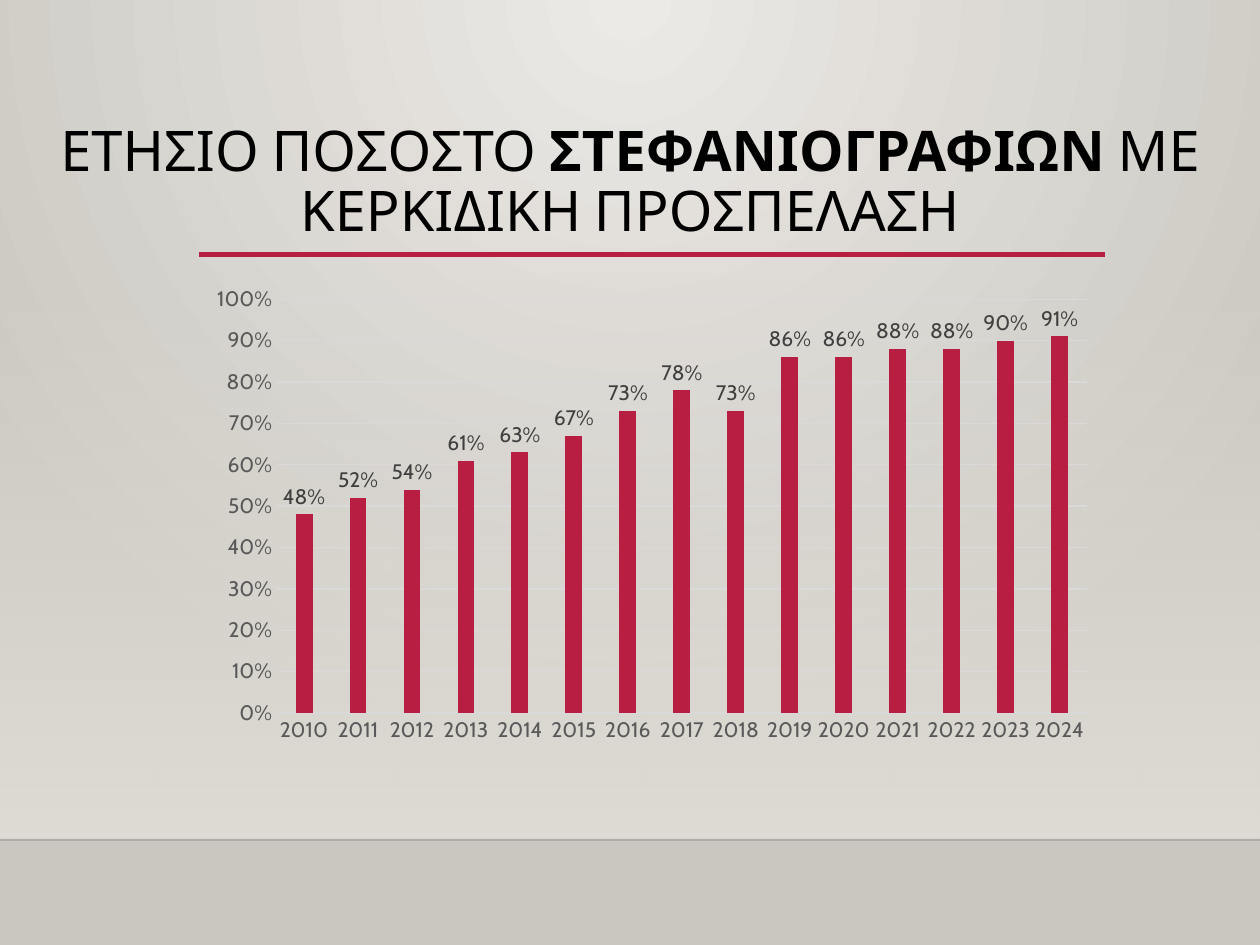
"""Build a slide charting the yearly share of coronary angiographies with radial access."""
from lxml.etree import SubElement
from pptx import Presentation
from pptx.chart.data import CategoryChartData
from pptx.dml.color import RGBColor
from pptx.enum.chart import XL_CHART_TYPE, XL_LABEL_POSITION, XL_TICK_MARK
from pptx.enum.shapes import MSO_CONNECTOR, MSO_SHAPE
from pptx.enum.text import MSO_ANCHOR, MSO_AUTO_SIZE, PP_ALIGN
from pptx.oxml.ns import qn
from pptx.util import Cm, Pt

FONT = "Cabin"
BLACK = RGBColor(0x00, 0x00, 0x00)
CRIMSON = RGBColor(0xB7, 0x1E, 0x42)
LIGHT = RGBColor(0xEC, 0xEA, 0xE7)
STONE = RGBColor(0xCA, 0xC7, 0xC1)
SAND = RGBColor(0xDF, 0xDB, 0xD5)
GRID = RGBColor(0xD9, 0xD9, 0xD9)
AXIS_TEXT = RGBColor(0x59, 0x59, 0x59)
LABEL_TEXT = RGBColor(0x40, 0x40, 0x40)

WIDTH = Cm(25.4)
CHART_LEFT, CHART_WIDTH = Cm(4.01), Cm(18.26)
WALL_TOP, FLOOR_TOP = Cm(5.59), Cm(16.93)
SHARES = [0.48, 0.52, 0.54, 0.61, 0.63, 0.67, 0.73, 0.78, 0.73,
          0.86, 0.86, 0.88, 0.88, 0.9, 0.91]


def set_font(font, size, color):
    font.name = FONT
    font.size = Pt(size)
    font.color.rgb = color


def set_alpha(color_element, percent):
    SubElement(color_element, qn("a:alpha")).set("val", str(percent * 1000))


deck = Presentation()
deck.slide_width = WIDTH
deck.slide_height = Cm(19.05)
page = deck.slides.add_slide(deck.slide_layouts[5])

backdrop = page.background.fill
backdrop.gradient()
for stop, color in zip(backdrop.gradient_stops, (LIGHT, STONE)):
    stop.color.rgb = color
gradient = page.element.find(".//" + qn("a:gradFill"))
gradient.remove(gradient.find(qn("a:lin")))
circle = SubElement(gradient, qn("a:path"))
circle.set("path", "circle")
focus = SubElement(circle, qn("a:fillToRect"))
for side, percent in (("l", 43), ("r", 43), ("b", 100)):
    focus.set(side, str(percent * 1000))

wall = page.shapes.add_shape(MSO_SHAPE.RECTANGLE, 0, WALL_TOP, WIDTH, FLOOR_TOP - WALL_TOP)
wall.shadow.inherit = False
wall.line.fill.background()
wall.fill.gradient()
wall.fill.gradient_angle = 270
for stop in wall.fill.gradient_stops:
    stop.color.rgb = SAND
set_alpha(wall.element.find(".//" + qn("a:srgbClr")), 0)

RULES = [
    (0, WIDTH, FLOOR_TOP, BLACK, 1, 20),
    (CHART_LEFT, CHART_LEFT + CHART_WIDTH, Cm(5.13), CRIMSON, 2.5, 100),
]
for left, right, top, color, weight, opacity in RULES:
    rule = page.shapes.add_connector(MSO_CONNECTOR.STRAIGHT, left, top, right, top)
    rule.line.color.rgb = color
    rule.line.width = Pt(weight)
    set_alpha(rule.element.find(".//" + qn("a:srgbClr")), opacity)
    SubElement(rule.element.spPr, qn("a:effectLst"))

title = page.shapes.title
title.left, title.top, title.width, title.height = 0, Cm(2.24), WIDTH, Cm(2.92)
frame = title.text_frame
frame.word_wrap = True
frame.auto_size = MSO_AUTO_SIZE.NONE
frame.vertical_anchor = MSO_ANCHOR.MIDDLE
heading = frame.paragraphs[0]
heading.alignment = PP_ALIGN.CENTER
heading.line_spacing = 0.9
for text, bold in (("ΕΤΗΣΙΟ ΠΟΣΟΣΤΟ ", False),
                   ("ΣΤΕΦΑΝΙΟΓΡΑΦΙΩΝ", True),
                   (" ΜΕ ΚΕΡΚΙΔΙΚΗ ΠΡΟΣΠΕΛΑΣΗ", False)):
    span = heading.add_run()
    span.text = text
    span.font.bold = bold
    set_font(span.font, 32, BLACK)

data = CategoryChartData(number_format="0%")
data.categories = [str(year) for year in range(2010, 2025)]
data.add_series("Series 1", SHARES)
chart = page.shapes.add_chart(XL_CHART_TYPE.COLUMN_CLUSTERED, CHART_LEFT, WALL_TOP,
                              CHART_WIDTH, Cm(9.58), data).chart
chart.has_title = False
chart.has_legend = False
set_font(chart.font, 10, BLACK)

years, percents = chart.category_axis, chart.value_axis
for axis in (years, percents):
    axis.major_tick_mark = XL_TICK_MARK.NONE
    axis.minor_tick_mark = XL_TICK_MARK.NONE
    set_font(axis.tick_labels.font, 12, AXIS_TEXT)
percents.minimum_scale, percents.maximum_scale, percents.major_unit = 0, 1, 0.1
percents.tick_labels.number_format = "0%"
percents.tick_labels.number_format_is_linked = False
percents.format.line.fill.background()
for line in (years.format.line, percents.major_gridlines.format.line):
    line.color.rgb = GRID
    line.width = Pt(0.75)

plot = chart.plots[0]
plot.vary_by_categories = False
plot.gap_width = 219
plot.overlap = -27
columns = plot.series[0]
columns.format.fill.solid()
columns.format.fill.fore_color.rgb = CRIMSON
labels = columns.data_labels
labels.show_value = True
labels.position = XL_LABEL_POSITION.OUTSIDE_END
set_font(labels.font, 12, LABEL_TEXT)

deck.save("out.pptx")
